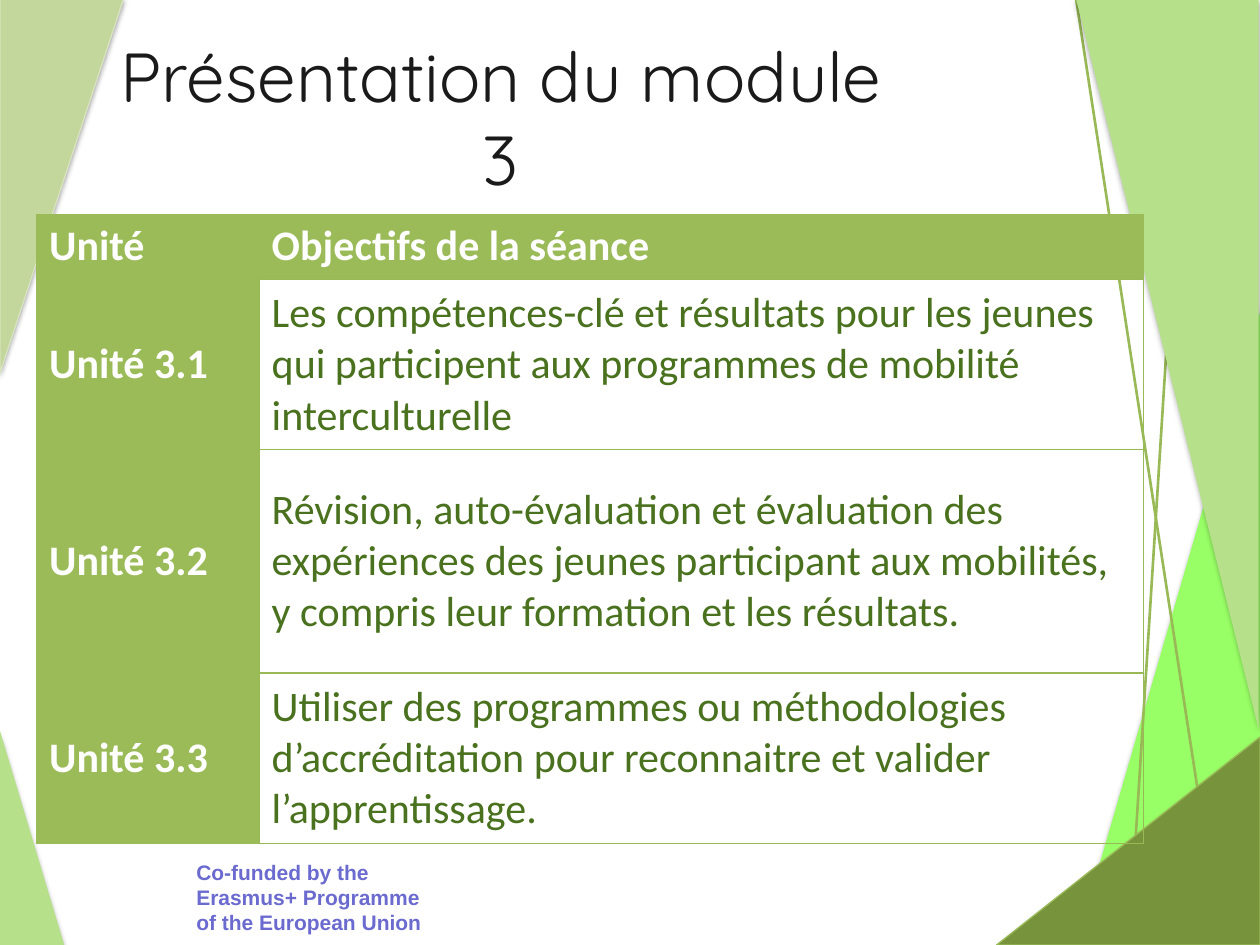
from typing import NamedTuple, Optional

import lxml.etree
import pptx
import pptx.dml.color
import pptx.enum.shapes
import pptx.enum.text
import pptx.oxml.ns
import pptx.util

Pt = pptx.util.Pt
RGBColor = pptx.dml.color.RGBColor
qn = pptx.oxml.ns.qn

LIME = RGBColor(0x99, 0xFF, 0x66)
PALE_GREEN = RGBColor(0xB7, 0xE0, 0x8B)
SAGE = RGBColor(0xC3, 0xD6, 0x9B)
SAGE_LINE = RGBColor(0xD7, 0xE4, 0xBD)
OLIVE = RGBColor(0x77, 0x93, 0x3C)
GREEN_LINE = RGBColor(0x98, 0xB9, 0x55)
TABLE_GREEN = RGBColor(0x9B, 0xBB, 0x59)
DARK_GREEN = RGBColor(0x49, 0x71, 0x1E)
WHITE = RGBColor(0xFF, 0xFF, 0xFF)
INK = RGBColor(0x1A, 0x1A, 0x1A)
VIOLET = RGBColor(0x6B, 0x6B, 0xCF)

HEADER_FONT = {"name": "Calibri", "size": Pt(24), "bold": True}
BODY_FONT = {"name": "Calibri", "size": Pt(24), "bold": False}
TITLE_FONT = {"name": "Quicksand", "size": Pt(39.6)}
FUNDING_FONT = {"name": "Arial", "size": Pt(12), "bold": True}


class Triangle(NamedTuple):
    left: float
    top: float
    width: float
    height: float
    fill: RGBColor
    flips: tuple = ()
    line: Optional[RGBColor] = None
    shadow_opacity: int = 35
    shadow_distance: float = 1.8


class Line(NamedTuple):
    start_x: float
    start_y: float
    end_x: float
    end_y: float


class Unit(NamedTuple):
    name: str
    goal: str
    height: float


LEFT_AND_BACK = [
    Triangle(614.9, 173.5, 106.6, 366.5, LIME, ("flipH",), None, 38, 1.6),
    Triangle(0, 417.6, 36.7, 122.4, PALE_GREEN),
    Triangle(0, -0.7, 70.6, 213.8, SAGE, ("flipV",), SAGE_LINE),
]
LINES = [Line(645.1, 540, 669.6, 151.2), Line(694.8, 519.1, 614.9, -0.7)]
RIGHT_FRONT = [
    Triangle(614.9, -0.7, 104.4, 417.6, PALE_GREEN, ("flipH", "flipV")),
    Triangle(569.5, 421.2, 150.5, 118.8, OLIVE, ("flipH",), GREEN_LINE),
]
UNITS = [
    Unit("Unité", "Objectifs de la séance", 37.2),
    Unit("Unité 3.1", "Les compétences-clé et résultats pour les jeunes qui participent "
         "aux programmes de mobilité interculturelle", 97.5),
    Unit("Unité 3.2", "Révision, auto-évaluation et évaluation des expériences des jeunes "
         "participant aux mobilités, y compris leur formation et les résultats.", 127.5),
    Unit("Unité 3.3", "Utiliser des programmes ou méthodologies d’accréditation pour "
         "reconnaitre et valider l’apprentissage.", 97.5),
]
COLUMN_WIDTHS = (127.2, 505.2)


def write_text(text_frame, text: str, formats: dict, color: RGBColor) -> None:
    paragraph = text_frame.paragraphs[0]
    run = paragraph.add_run()
    run.text = text
    for name, value in formats.items():
        setattr(run.font, name, value)
    run.font.color.rgb = color


def add_color(parent, color: RGBColor):
    element = lxml.etree.SubElement(parent, qn("a:srgbClr"))
    element.set("val", str(color))
    return element


def draw_triangle(slide, triangle: Triangle) -> None:
    shape = slide.shapes.add_shape(
        pptx.enum.shapes.MSO_SHAPE.RIGHT_TRIANGLE, *(Pt(length) for length in triangle[:4]))
    shape.fill.solid()
    shape.fill.fore_color.rgb = triangle.fill
    if triangle.line is None:
        shape.line.fill.background()
    else:
        shape.line.color.rgb = triangle.line
        shape.line.width = Pt(0.75)
    properties = shape.element.spPr
    for flip in triangle.flips:
        properties.find(qn("a:xfrm")).set(flip, "1")
    shape.shadow.inherit = False
    effects = properties.find(qn("a:effectLst"))
    shadow = lxml.etree.SubElement(effects, qn("a:outerShdw"))
    for name, value in {"blurRad": Pt(3.1), "dist": Pt(triangle.shadow_distance),
                        "dir": 90 * 60000, "rotWithShape": 0}.items():
        shadow.set(name, str(int(value)))
    alpha = lxml.etree.SubElement(add_color(shadow, RGBColor(0, 0, 0)), qn("a:alpha"))
    alpha.set("val", str(triangle.shadow_opacity * 1000))


def draw_line(slide, line: Line) -> None:
    connector = slide.shapes.add_connector(
        pptx.enum.shapes.MSO_CONNECTOR.STRAIGHT, *(Pt(length) for length in line))
    connector.line.color.rgb = GREEN_LINE
    connector.line.width = Pt(1.5)
    lxml.etree.SubElement(connector.element.spPr, qn("a:effectLst"))


def fill_cell(cell, text: str, is_green: bool, formats: dict, is_header: bool) -> None:
    properties = cell._tc.get_or_add_tcPr()
    for side in ("L", "R", "T", "B"):
        border = lxml.etree.SubElement(properties, qn(f"a:ln{side}"))
        border.set("w", str(int(Pt(0.75))))
        border_fill = lxml.etree.SubElement(border, qn("a:solidFill"))
        add_color(border_fill, TABLE_GREEN if is_green else GREEN_LINE)
    if is_green:
        cell.fill.solid()
        cell.fill.fore_color.rgb = TABLE_GREEN
    else:
        cell.fill.background()
    anchors = pptx.enum.text.MSO_ANCHOR
    cell.vertical_anchor = anchors.TOP if is_header else anchors.MIDDLE
    write_text(cell.text_frame, text, formats, WHITE if is_green else DARK_GREEN)


def draw_unit_table(slide) -> None:
    frame = slide.shapes.add_table(
        len(UNITS), len(COLUMN_WIDTHS), Pt(20.9), Pt(122.4),
        Pt(sum(COLUMN_WIDTHS)), Pt(sum(unit.height for unit in UNITS)))
    table = frame.table
    table.first_row = table.horz_banding = False
    for column, width in zip(table.columns, COLUMN_WIDTHS):
        column.width = Pt(width)
    for index, unit in enumerate(UNITS):
        table.rows[index].height = Pt(unit.height)
        is_header = index == 0
        fill_cell(table.cell(index, 0), unit.name, True, HEADER_FONT, is_header)
        fill_cell(table.cell(index, 1), unit.goal, is_header,
                  HEADER_FONT if is_header else BODY_FONT, is_header)


def place_title(slide) -> None:
    title = slide.shapes.title
    for name, value in {"left": 53.3, "top": 21.6, "width": 465.8, "height": 90}.items():
        setattr(title, name, Pt(value))
    text_frame = title.text_frame
    text_frame.word_wrap = True
    text_frame.auto_size = pptx.enum.text.MSO_AUTO_SIZE.NONE
    text_frame.vertical_anchor = pptx.enum.text.MSO_ANCHOR.MIDDLE
    text_frame.paragraphs[0].alignment = pptx.enum.text.PP_ALIGN.CENTER
    write_text(text_frame, "Présentation du module 3", TITLE_FONT, INK)


def draw_funding_note(slide) -> None:
    box = slide.shapes.add_textbox(Pt(105.1), Pt(487.4), Pt(144), Pt(51.1))
    box.text_frame.word_wrap = True
    write_text(box.text_frame, "Co-funded by the Erasmus+ Programme of the European Union",
               FUNDING_FONT, VIOLET)


def main() -> None:
    presentation = pptx.Presentation()
    presentation.slide_width, presentation.slide_height = Pt(720), Pt(540)
    slide = presentation.slides.add_slide(presentation.slide_layouts[5])
    for triangle in LEFT_AND_BACK:
        draw_triangle(slide, triangle)
    for line in LINES:
        draw_line(slide, line)
    for triangle in RIGHT_FRONT:
        draw_triangle(slide, triangle)
    draw_funding_note(slide)
    place_title(slide)
    draw_unit_table(slide)
    presentation.save("out.pptx")


if __name__ == "__main__":
    main()
